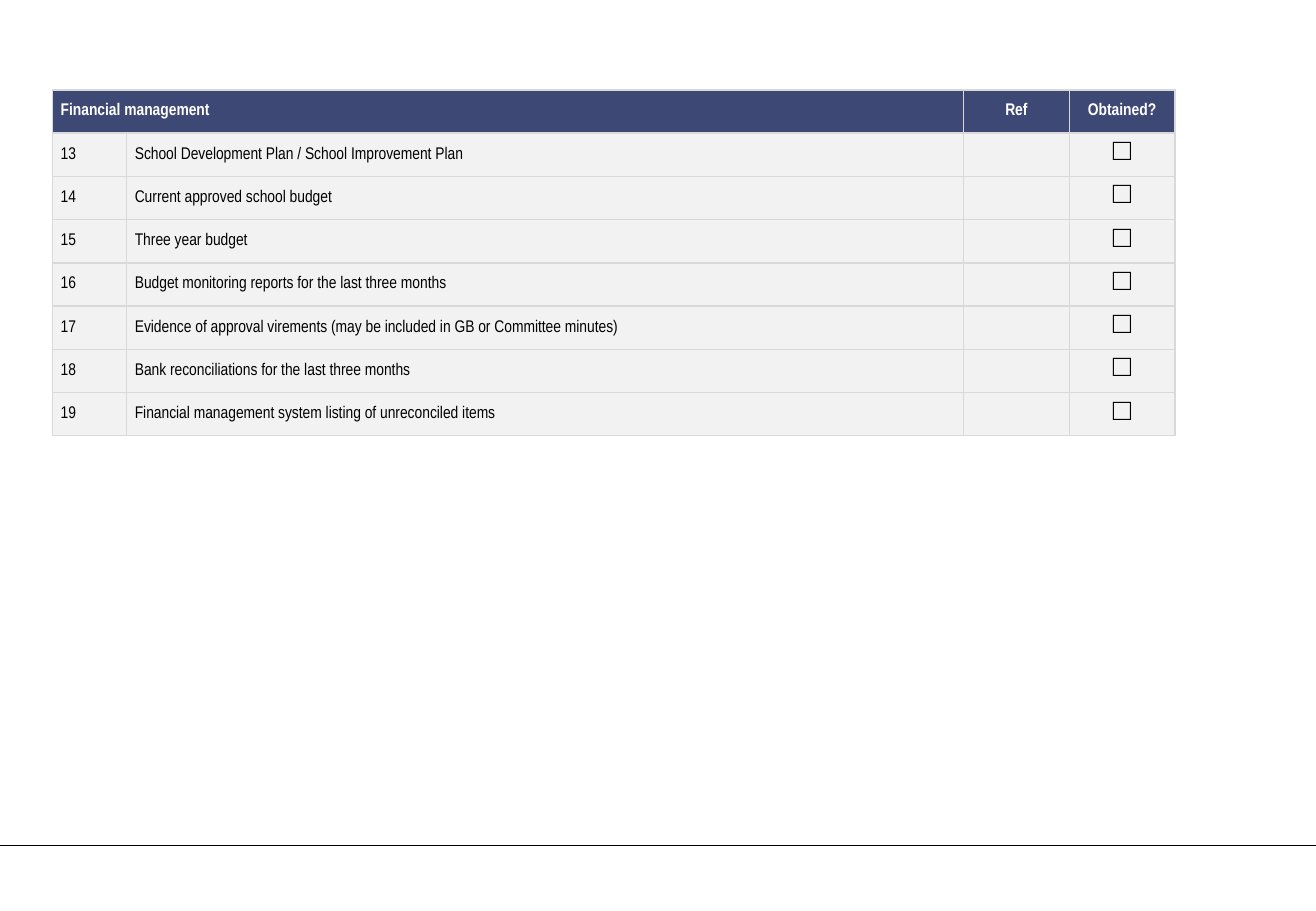
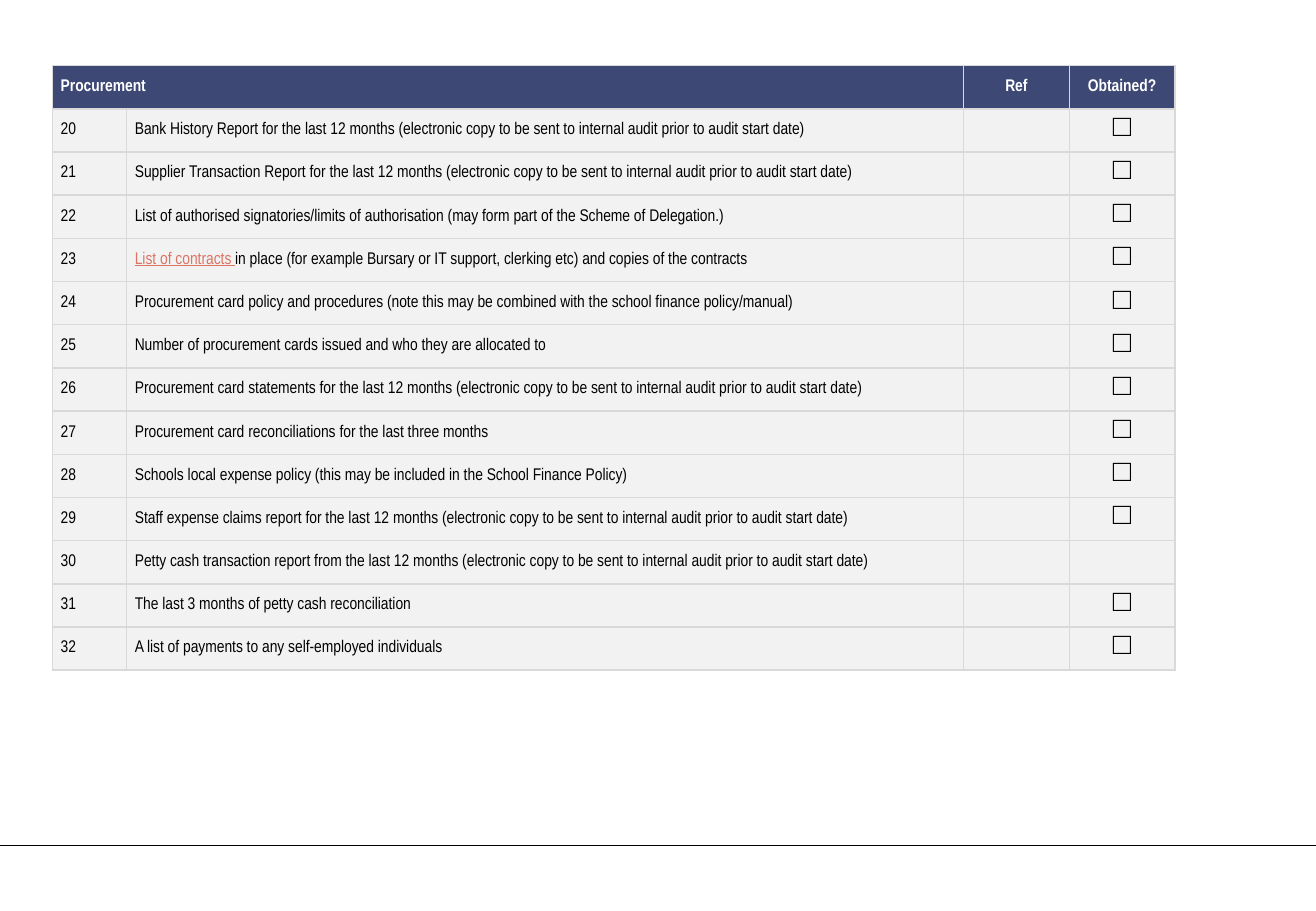
from pptx import Presentation
from pptx.dml.color import RGBColor
from pptx.enum.shapes import MSO_CONNECTOR as Connector
from pptx.enum.text import MSO_ANCHOR as Anchor, PP_ALIGN as Align
from pptx.oxml.ns import qn
from pptx.util import Inches, Pt
from lxml.etree import SubElement

COLORS = {
    "header": "3E4875",
    "header_text": "FFFFFF",
    "row": "F2F2F2",
    "text": "000000",
    "border": "D9D9D9",
    "link": "DC7463",
    "footer_rule": "000000",
}

# Shared formats
HEADER_FONT = {"size": Pt(10), "name": "Arial Narrow", "bold": True}
BODY_FONT = {"size": Pt(10), "name": "Arial Narrow", "bold": False}
LINK_FONT = {**BODY_FONT, "underline": True}
BOX_FONT = {"size": Pt(18), "name": "Arial", "bold": False}
CELL_FORMAT = {
    "margin_left": Inches(0.07),
    "margin_right": Inches(0.07),
    "margin_top": 0,
    "margin_bottom": 0,
}

SLIDE_WIDTH, SLIDE_HEIGHT = 10.83, 7.5
TABLE_LEFT, TABLE_WIDTH = 0.43, 9.25
COLUMN_WIDTHS = (0.61, 6.89, 0.87, 0.87)
FOOTER_TOP = 6.96
CHECKBOX = "□"

# Checklist content
FINANCE_ITEMS = [
    "School Development Plan / School Improvement Plan",
    "Current approved school budget",
    "Three year budget",
    "Budget monitoring reports for the last three months",
    "Evidence of approval virements (may be included in GB or Committee minutes)",
    "Bank reconciliations for the last three months",
    "Financial management system listing of unreconciled items",
]
COPY_NOTE = "(electronic copy to be sent to internal audit prior to audit start date)"
LINK_TEXT = "List of contracts "
PROCUREMENT_ITEMS = [
    f"Bank History Report for the last 12 months {COPY_NOTE}",
    f"Supplier Transaction Report for the last 12 months {COPY_NOTE}",
    "List of authorised signatories/limits of authorisation "
    "(may form part of the Scheme of Delegation.)",
    f"{LINK_TEXT}in place (for example Bursary or IT support, clerking etc) "
    "and copies of the contracts",
    "Procurement card policy and procedures "
    "(note this may be combined with the school finance policy/manual)",
    "Number of procurement cards issued and who they are allocated to",
    f"Procurement card statements for the last 12 months {COPY_NOTE}",
    "Procurement card reconciliations for the last three months",
    "Schools local expense policy (this may be included in the School Finance Policy)",
    f"Staff expense claims report for the last 12 months {COPY_NOTE}",
    f"Petty cash transaction report from the last 12 months {COPY_NOTE}",
    "The last 3 months of petty cash reconciliation",
    "A list of payments to any self-employed individuals",
]
NO_CHECKBOX = {30}


def rgb(key):
    return RGBColor.from_string(COLORS[key])


def apply_format(target, values):
    for attribute, value in values.items():
        setattr(target, attribute, value)


def set_borders(cell):
    properties = cell._tc.get_or_add_tcPr()
    for side in ("a:lnL", "a:lnR", "a:lnT", "a:lnB"):
        border = SubElement(properties, qn(side), w=str(Pt(1)))
        fill = SubElement(border, qn("a:solidFill"))
        SubElement(fill, qn("a:srgbClr"), val=COLORS["border"])


def style_cell(cell, fill_key):
    set_borders(cell)
    cell.fill.solid()
    cell.fill.fore_color.rgb = rgb(fill_key)
    apply_format(cell, CELL_FORMAT)


def write_cell(cell, runs, align=Align.LEFT, anchor=Anchor.MIDDLE):
    """Write (text, font format, colour key) runs into one paragraph."""
    cell.vertical_anchor = anchor
    paragraph = cell.text_frame.paragraphs[0]
    paragraph.alignment = align
    for text, font_format, color_key in runs:
        run = paragraph.add_run()
        run.text = text
        apply_format(run.font, font_format)
        run.font.color.rgb = rgb(color_key)


def item_runs(item):
    if item.startswith(LINK_TEXT):
        return [(LINK_TEXT, LINK_FONT, "link"),
                (item.removeprefix(LINK_TEXT), BODY_FONT, "text")]
    return [(item, BODY_FONT, "text")]


def add_footer_rule(slide):
    rule = slide.shapes.add_connector(
        Connector.STRAIGHT, 0, Inches(FOOTER_TOP),
        Inches(SLIDE_WIDTH), Inches(FOOTER_TOP))
    rule.line.color.rgb = rgb("footer_rule")
    rule.line.width = Pt(0.5)
    SubElement(rule._element.spPr, qn("a:effectLst"))


def add_checklist(slide, heading, items, first_number, top, height):
    checklist = slide.shapes.add_table(
        len(items) + 1, len(COLUMN_WIDTHS), Inches(TABLE_LEFT), Inches(top),
        Inches(TABLE_WIDTH), Inches(height)).table
    apply_format(checklist, {"first_row": False, "horz_banding": False})
    for column, width in zip(checklist.columns, COLUMN_WIDTHS):
        column.width = Inches(width)
    for row_index, row in enumerate(checklist.rows):
        for cell in row.cells:
            style_cell(cell, "row" if row_index else "header")

    # Header row
    checklist.cell(0, 0).merge(checklist.cell(0, 1))
    for column, label, align in ((0, heading, Align.LEFT),
                                 (2, "Ref", Align.CENTER),
                                 (3, "Obtained?", Align.CENTER)):
        write_cell(checklist.cell(0, column),
                   [(label, HEADER_FONT, "header_text")], align)

    # Numbered items
    for row_index, item in enumerate(items, start=1):
        number = first_number + row_index - 1
        write_cell(checklist.cell(row_index, 0), [(str(number), BODY_FONT, "text")])
        write_cell(checklist.cell(row_index, 1), item_runs(item))
        if number not in NO_CHECKBOX:
            write_cell(checklist.cell(row_index, 3), [(CHECKBOX, BOX_FONT, "text")],
                       Align.CENTER, Anchor.TOP)


def main():
    deck = Presentation()
    deck.slide_width, deck.slide_height = Inches(SLIDE_WIDTH), Inches(SLIDE_HEIGHT)
    sections = (
        ("Financial management", FINANCE_ITEMS, 13, 0.74, 2.85),
        ("Procurement", PROCUREMENT_ITEMS, 20, 0.54, 4.98),
    )
    for section in sections:
        slide = deck.slides.add_slide(deck.slide_layouts[6])
        add_footer_rule(slide)
        add_checklist(slide, *section)
    deck.save("out.pptx")


if __name__ == "__main__":
    main()
